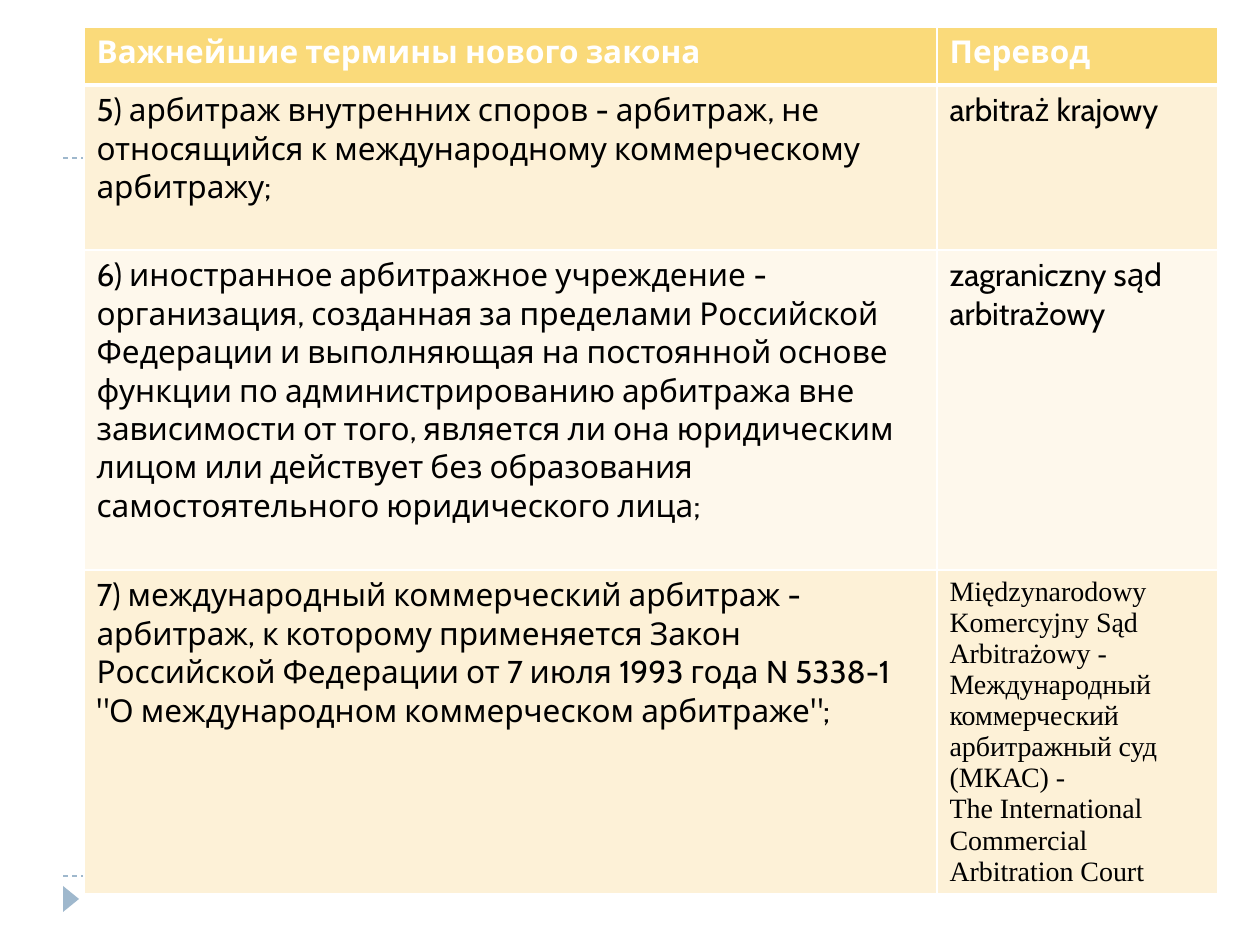
import dataclasses

import lxml.etree
import pptx
import pptx.dml.color
import pptx.enum.dml
import pptx.enum.shapes
import pptx.oxml.ns
import pptx.util

RGBColor = pptx.dml.color.RGBColor
WHITE = RGBColor(0xFF, 0xFF, 0xFF)
BLACK = RGBColor(0x00, 0x00, 0x00)
BLUE = RGBColor(0x9F, 0xB8, 0xCD)
GOLD = RGBColor(0xFA, 0xDA, 0x7A)
BAND_DARK = RGBColor(0xFD, 0xF1, 0xD7)
BAND_LIGHT = RGBColor(0xFE, 0xF8, 0xEC)

PX_PER_INCH = 126
COLUMN_WIDTHS = (853, 281)


@dataclasses.dataclass(frozen=True)
class TextStyle:
    font: str
    size: int
    color: RGBColor = BLACK
    bold: bool = False


HEADING = TextStyle("Cabin", 18, WHITE, True)
BODY = TextStyle("Cabin", 18)
SERIF = TextStyle("Times New Roman", 16)


@dataclasses.dataclass(frozen=True)
class TermRow:
    height: int
    fill: RGBColor
    term: str
    translation: str
    term_style: TextStyle = BODY
    translation_style: TextStyle = BODY
    bottom_border: int = 1


ROWS = (
    TermRow(58, GOLD, "Важнейшие термины нового закона", "Перевод",
            HEADING, HEADING, 3),
    TermRow(165, BAND_DARK,
            "5) арбитраж внутренних споров - арбитраж, не относящийся к "
            "международному коммерческому арбитражу;",
            "arbitraż krajowy"),
    TermRow(320, BAND_LIGHT,
            "6) иностранное арбитражное учреждение - организация, созданная за "
            "пределами Российской Федерации и выполняющая на постоянной основе "
            "функции по администрированию арбитража вне зависимости от того, "
            "является ли она юридическим лицом или действует без образования "
            "самостоятельного юридического лица;",
            "zagraniczny sąd arbitrażowy"),
    TermRow(323, BAND_DARK,
            "7) международный коммерческий арбитраж - арбитраж, к которому "
            "применяется Закон Российской Федерации от 7 июля 1993 года "
            'N 5338-1 "О международном коммерческом арбитраже";',
            "Międzynarodowy\n"
            "Komercyjny Sąd Arbitrażowy - Международный коммерческий "
            "арбитражный суд (МКАС) -\n"
            "The International Commercial Arbitration Court",
            translation_style=SERIF),
)


def px(length: int) -> pptx.util.Emu:
    return pptx.util.Emu(round(length * 914400 / PX_PER_INCH))


def add_rule(page, y: int) -> None:
    rule = page.shapes.add_connector(
        pptx.enum.shapes.MSO_CONNECTOR.STRAIGHT, px(63), px(y), px(1197), px(y))
    rule.line.color.rgb = BLUE
    rule.line.width = pptx.util.Pt(0.75)
    rule.line.dash_style = pptx.enum.dml.MSO_LINE.DASH
    lxml.etree.SubElement(rule._element.spPr, pptx.oxml.ns.qn("a:effectLst"))


def add_marker(page) -> None:
    marker = page.shapes.add_shape(
        pptx.enum.shapes.MSO_SHAPE.ISOSCELES_TRIANGLE,
        px(58), px(891), px(26), px(16))
    marker.rotation = 90
    marker.shadow.inherit = False
    marker.fill.solid()
    marker.fill.fore_color.rgb = BLUE
    marker.line.fill.background()


def set_borders(cell, top: int, bottom: int) -> None:
    properties = cell._tc.get_or_add_tcPr()
    for side, points in (("L", 1), ("R", 1), ("T", top), ("B", bottom)):
        border = lxml.etree.SubElement(
            properties, pptx.oxml.ns.qn(f"a:ln{side}"),
            w=str(pptx.util.Pt(points)))
        fill = lxml.etree.SubElement(border, pptx.oxml.ns.qn("a:solidFill"))
        lxml.etree.SubElement(
            fill, pptx.oxml.ns.qn("a:srgbClr"), val=str(WHITE))


def write_cell(cell, text: str, style: TextStyle) -> None:
    cell.text_frame.text = text
    for para in cell.text_frame.paragraphs:
        for span in para.runs:
            span.font.name = style.font
            span.font.size = pptx.util.Pt(style.size)
            span.font.bold = style.bold
            span.font.color.rgb = style.color


def add_terms_table(page) -> None:
    table = page.shapes.add_table(
        len(ROWS), len(COLUMN_WIDTHS), px(84), px(27),
        px(sum(COLUMN_WIDTHS)), px(sum(row.height for row in ROWS))).table
    for column, width in zip(table.columns, COLUMN_WIDTHS):
        column.width = px(width)
    top_border = 1
    for index, row in enumerate(ROWS):
        table.rows[index].height = px(row.height)
        contents = ((row.term, row.term_style),
                    (row.translation, row.translation_style))
        for cell, (text, style) in zip(table.rows[index].cells, contents):
            write_cell(cell, text, style)
            set_borders(cell, top_border, row.bottom_border)
            cell.fill.solid()
            cell.fill.fore_color.rgb = row.fill
        top_border = row.bottom_border


def main() -> None:
    deck = pptx.Presentation()
    deck.slide_width, deck.slide_height = px(1260), px(945)
    page = deck.slides.add_slide(deck.slide_layouts[6])

    # Background rules and corner marker
    for y in (876, 158):
        add_rule(page, y)
    add_marker(page)

    # Terms and their translations
    add_terms_table(page)

    deck.save("out.pptx")


if __name__ == "__main__":
    main()
